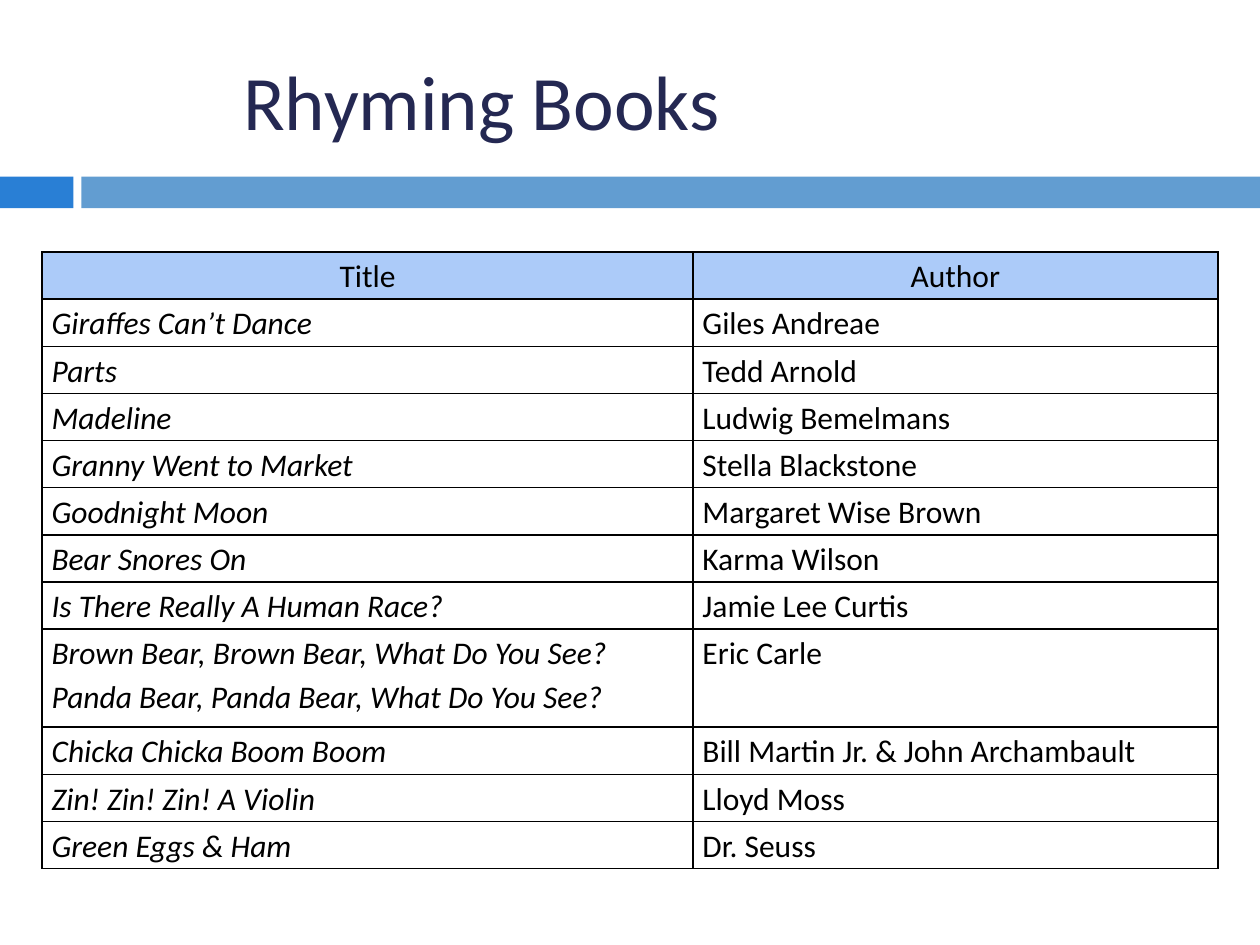
from dataclasses import dataclass

from lxml import etree
from pptx import Presentation
from pptx.dml.color import RGBColor
from pptx.enum.shapes import MSO_SHAPE
from pptx.enum.text import MSO_ANCHOR, PP_ALIGN
from pptx.oxml.ns import qn
from pptx.util import Cm, Pt

RECTANGLE = MSO_SHAPE.RECTANGLE
MIDDLE = MSO_ANCHOR.MIDDLE
LEFT, CENTER = PP_ALIGN.LEFT, PP_ALIGN.CENTER
TITLE_ONLY = 5


@dataclass(frozen=True)
class Theme:
    font: str = "Calibri"
    title_size: int = 44
    table_size: int = 18
    line_spacing: float = 1.15
    border_width: int = 1
    title: str = "242852"
    text: str = "000000"
    border: str = "000000"
    header_fill: str = "ACCBF9"
    accent: str = "297FD5"
    band: str = "629DD1"


@dataclass(frozen=True)
class Bar:
    left: float
    width: float
    color: str


@dataclass(frozen=True)
class Book:
    titles: tuple[str, ...]
    author: str


THEME = Theme()

# Lengths in centimetres
SLIDE_WIDTH, SLIDE_HEIGHT = 25.4, 19.05
BAR_TOP, BAR_HEIGHT = 3.56, 0.64
BARS = (Bar(0, 1.48, THEME.accent), Bar(1.64, 23.76, THEME.band))
TABLE_LEFT, TABLE_TOP = 0.85, 5.08
COLUMN_WIDTHS = (13.12, 10.58)
ROW_HEIGHT, EXTRA_TITLE_HEIGHT = 0.95, 1.03
CELL_INSET = 0.19

BOOKS = (
    Book(("Giraffes Can’t Dance",), "Giles Andreae"),
    Book(("Parts",), "Tedd Arnold"),
    Book(("Madeline",), "Ludwig Bemelmans"),
    Book(("Granny Went to Market",), "Stella Blackstone"),
    Book(("Goodnight Moon",), "Margaret Wise Brown"),
    Book(("Bear Snores On",), "Karma Wilson"),
    Book(("Is There Really A Human Race?",), "Jamie Lee Curtis"),
    Book(("Brown Bear, Brown Bear, What Do You See?",
          "Panda Bear, Panda Bear, What Do You See?"), "Eric Carle"),
    Book(("Chicka Chicka Boom Boom",), "Bill Martin Jr. & John Archambault"),
    Book(("Zin! Zin! Zin! A Violin",), "Lloyd Moss"),
    Book(("Green Eggs & Ham",), "Dr. Seuss"),
)


def add_run(paragraph, text: str, size: int, color: str, italic: bool = False) -> None:
    run = paragraph.add_run()
    run.text = text
    run.font.name = THEME.font
    run.font.size = Pt(size)
    run.font.italic = italic
    run.font.color.rgb = RGBColor.from_string(color)


def add_heading(slide, text: str) -> None:
    heading = slide.shapes.title
    heading.left, heading.top = Cm(4.65), Cm(0.64)
    heading.width, heading.height = Cm(19.69), Cm(2.74)
    heading.text_frame.vertical_anchor = MIDDLE
    paragraph = heading.text_frame.paragraphs[0]
    paragraph.alignment = LEFT
    add_run(paragraph, text, THEME.title_size, THEME.title)


def add_bar(slide, bar: Bar) -> None:
    strip = slide.shapes.add_shape(
        RECTANGLE, Cm(bar.left), Cm(BAR_TOP), Cm(bar.width), Cm(BAR_HEIGHT))
    strip.shadow.inherit = False
    strip.fill.solid()
    strip.fill.fore_color.rgb = RGBColor.from_string(bar.color)
    strip.line.fill.background()


def set_borders(cell) -> None:
    properties = cell._tc.get_or_add_tcPr()
    # Border lines come before the fill in the cell properties
    for position, side in enumerate(("a:lnL", "a:lnR", "a:lnT", "a:lnB")):
        line = etree.Element(qn(side), w=str(Pt(THEME.border_width)))
        fill = etree.SubElement(line, qn("a:solidFill"))
        etree.SubElement(fill, qn("a:srgbClr"), val=THEME.border)
        properties.insert(position, line)


def fill_cell(cell, lines: tuple[str, ...], header: bool = False,
              italic: bool = False) -> None:
    cell.margin_left = cell.margin_right = Cm(CELL_INSET)
    cell.margin_top = cell.margin_bottom = 0
    if header:
        cell.fill.solid()
        cell.fill.fore_color.rgb = RGBColor.from_string(THEME.header_fill)
    else:
        cell.fill.background()
    set_borders(cell)
    frame = cell.text_frame
    for index, line in enumerate(lines):
        paragraph = frame.add_paragraph() if index else frame.paragraphs[0]
        paragraph.alignment = CENTER if header else LEFT
        paragraph.line_spacing = THEME.line_spacing
        add_run(paragraph, line, THEME.table_size, THEME.text, italic)


def add_book_table(slide, books: tuple[Book, ...]) -> None:
    heights = [ROW_HEIGHT] + [
        ROW_HEIGHT + EXTRA_TITLE_HEIGHT * (len(book.titles) - 1) for book in books]
    table = slide.shapes.add_table(
        len(heights), len(COLUMN_WIDTHS), Cm(TABLE_LEFT), Cm(TABLE_TOP),
        Cm(sum(COLUMN_WIDTHS)), Cm(sum(heights))).table
    table.first_row = table.horz_banding = False
    for column, width in zip(table.columns, COLUMN_WIDTHS):
        column.width = Cm(width)
    for row, height in zip(table.rows, heights):
        row.height = Cm(height)

    # Header row
    for column, label in enumerate(("Title", "Author")):
        fill_cell(table.cell(0, column), (label,), header=True)
    # One row per author
    for row, book in enumerate(books, start=1):
        fill_cell(table.cell(row, 0), book.titles, italic=True)
        fill_cell(table.cell(row, 1), (book.author,))


def main() -> None:
    presentation = Presentation()
    presentation.slide_width = Cm(SLIDE_WIDTH)
    presentation.slide_height = Cm(SLIDE_HEIGHT)
    slide = presentation.slides.add_slide(presentation.slide_layouts[TITLE_ONLY])

    for bar in BARS:
        add_bar(slide, bar)
    add_heading(slide, "Rhyming Books")
    add_book_table(slide, BOOKS)

    presentation.save("out.pptx")


if __name__ == "__main__":
    main()
